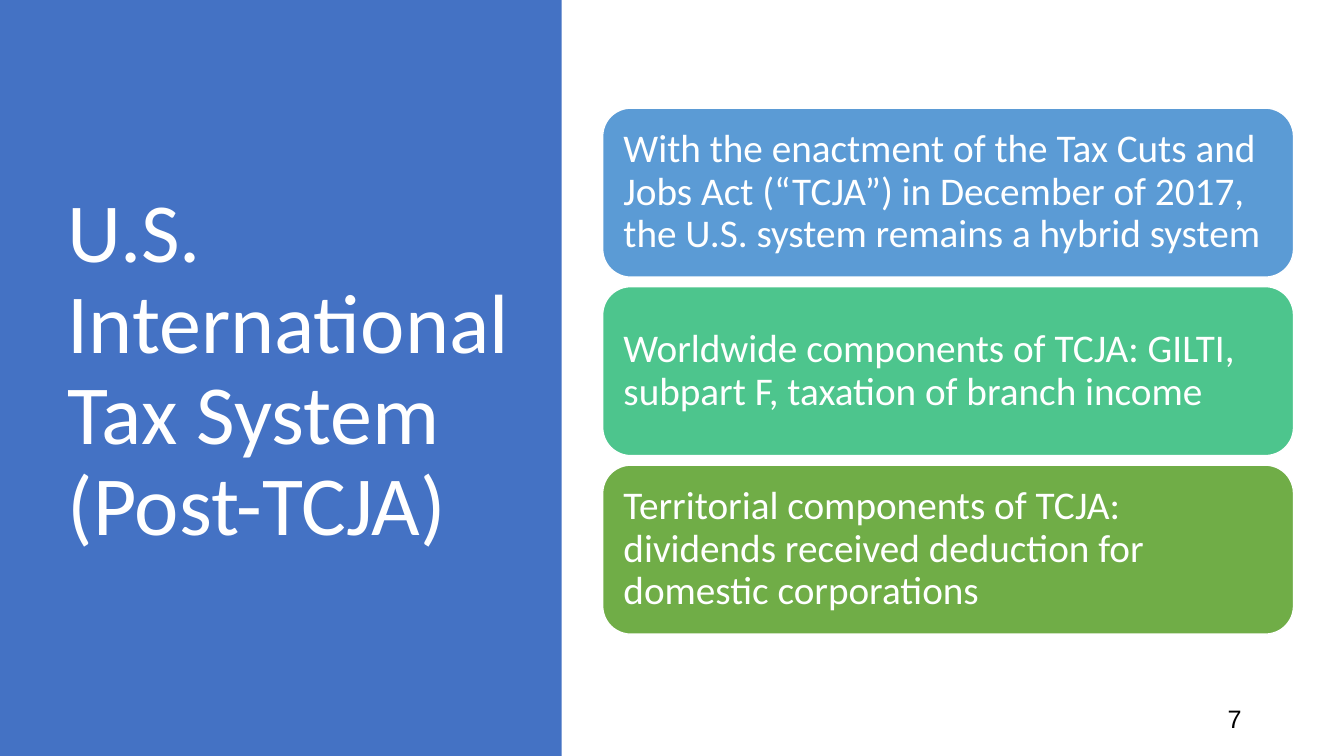
"""Build the slide on the U.S. international tax system after the TCJA."""
from dataclasses import dataclass

from pptx import Presentation
from pptx.dml.color import RGBColor
from pptx.enum.shapes import MSO_SHAPE
from pptx.enum.text import MSO_ANCHOR, PP_ALIGN
from pptx.util import Emu, Pt

SCALE = 9525


@dataclass(frozen=True)
class Theme:
    white: str = "FFFFFF"
    black: str = "000000"
    panel: str = "4472C4"
    cards: tuple = ("5B9BD5", "4DC58D", "70AD47")
    font: str = "Calibri"
    number_font: str = "Arial"
    title: int = 60
    body: int = 28
    number: int = 18


THEME = Theme()
POINTS = (
    "With the enactment of the Tax Cuts and Jobs Act (“TCJA”) in December of 2017, "
    "the U.S. system remains a hybrid system",
    "Worldwide components of TCJA: GILTI, subpart F, taxation of branch income",
    "Territorial components of TCJA: dividends received deduction for domestic corporations",
)
CARD_TOP, CARD_STEP = 103, 170


def px(*values):
    return [Emu(value * SCALE) for value in values]


def write(shape, text, size, color=THEME.white, font=THEME.font, align=PP_ALIGN.LEFT):
    frame = shape.text_frame
    frame.word_wrap = True
    frame.vertical_anchor = MSO_ANCHOR.MIDDLE
    para = frame.paragraphs[0]
    para.text = text
    para.alignment = align
    para.line_spacing = 0.9
    para.font.name = font
    para.font.size = Pt(size)
    para.font.color.rgb = RGBColor.from_string(color)


def add_block(slide, kind, box, color):
    shape = slide.shapes.add_shape(kind, *px(*box))
    shape.shadow.inherit = False
    shape.fill.solid()
    shape.fill.fore_color.rgb = RGBColor.from_string(color)
    shape.line.fill.background()
    return shape


def add_card(slide, top, text, color):
    card = add_block(slide, MSO_SHAPE.ROUNDED_RECTANGLE, (574, top, 658, 161), color)
    card.line.color.rgb = RGBColor.from_string(THEME.white)
    card.line.width = Pt(1)
    frame = card.text_frame
    frame.margin_left, frame.margin_right, frame.margin_top, frame.margin_bottom = px(12, 12, 12, 12)
    write(card, text, THEME.body)


def add_label(slide, box, *args, **style):
    write(slide.shapes.add_textbox(*px(*box)), *args, **style)


def main():
    deck = Presentation()
    deck.slide_width, deck.slide_height = px(1280, 720)
    slide = deck.slides.add_slide(deck.slide_layouts[6])
    add_block(slide, MSO_SHAPE.RECTANGLE, (0, 0, 535, 720), THEME.panel)
    add_label(slide, (55, 65, 444, 578), "U.S. International Tax System\n(Post-TCJA)", THEME.title)
    add_label(slide, (904, 667, 288, 38), "7", THEME.number, color=THEME.black,
              font=THEME.number_font, align=PP_ALIGN.RIGHT)
    for index, (text, color) in enumerate(zip(POINTS, THEME.cards)):
        add_card(slide, CARD_TOP + index * CARD_STEP, text, color)
    deck.save("out.pptx")


if __name__ == "__main__":
    main()
